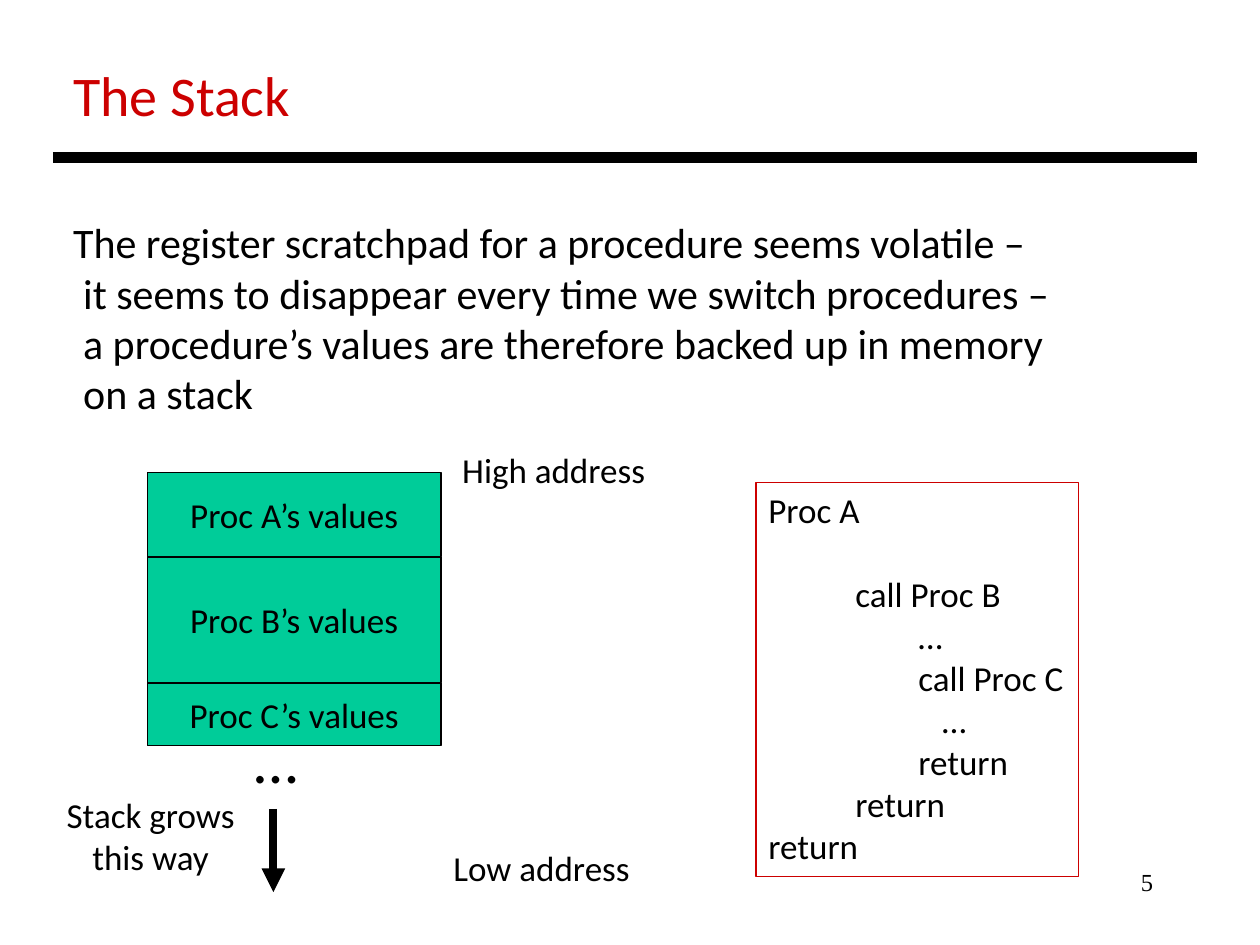
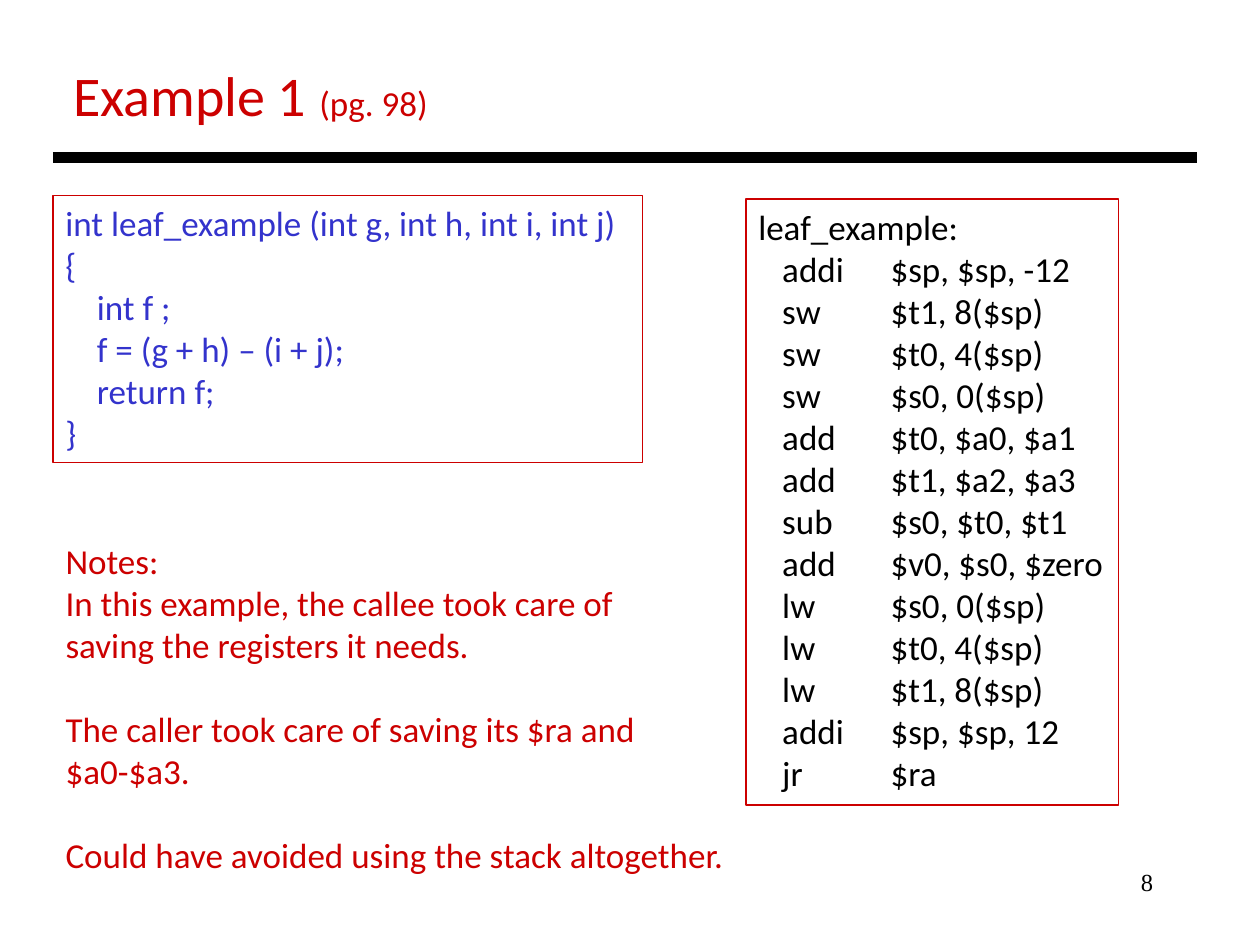
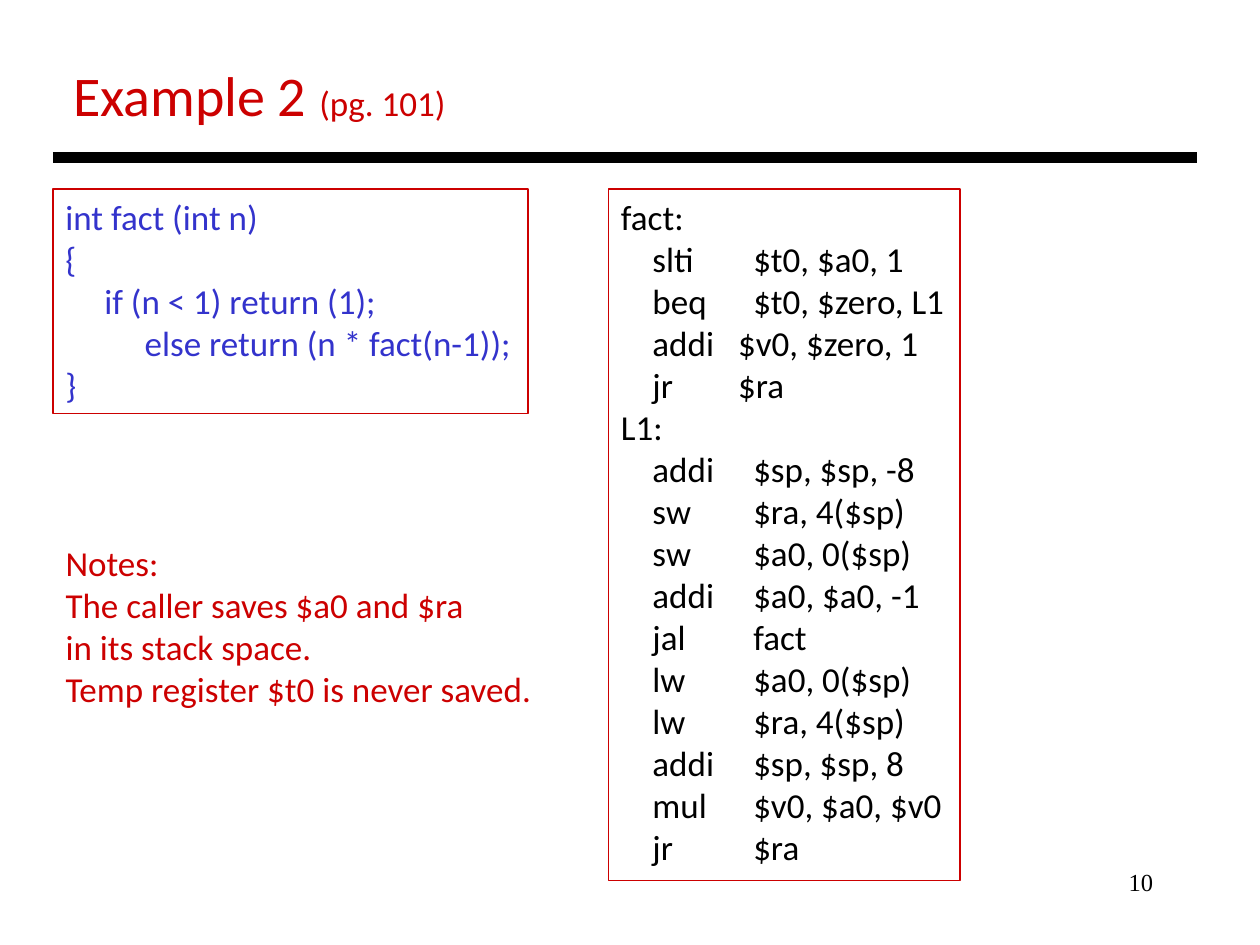
from dataclasses import dataclass

from lxml.etree import SubElement
from pptx import Presentation
from pptx.dml.color import RGBColor
from pptx.enum.shapes import MSO_CONNECTOR as Connector
from pptx.enum.shapes import MSO_SHAPE as Preset
from pptx.enum.text import MSO_ANCHOR as Anchor
from pptx.enum.text import MSO_AUTO_SIZE as AutoSize
from pptx.enum.text import PP_ALIGN as Align
from pptx.oxml.ns import qn
from pptx.shapes.base import BaseShape
from pptx.slide import Slide
from pptx.util import Inches, Pt

COLORS = {"red": "CC0000", "black": "000000", "blue": "3333CC", "green": "00CC99"}
TEXT_FONT = "Calibri"
NUMBER_FONT = "Times New Roman"
BLANK_LINE = Pt(24)
INSET = Inches(0.1)


@dataclass(frozen=True)
class Area:
    left: float
    top: float
    width: float
    height: float

    def lengths(self) -> tuple:
        return tuple(Inches(n) for n in (self.left, self.top, self.width, self.height))


@dataclass(frozen=True)
class Passage:
    """Lines of text in an area.

    Gaps are the indexes of lines set apart. With tabs, a line moves along those
    stops (inches); otherwise its leading tabs choose one of the indents (inches).
    """
    area: Area
    lines: tuple[str, ...]
    color: str = "black"
    size: int = 20
    align: Align = Align.LEFT
    indents: tuple[float, ...] = (0,)
    tabs: tuple[float, ...] = ()
    gaps: tuple[int, ...] = ()


@dataclass(frozen=True)
class Page:
    number: int
    title: str
    reference: str
    prose: Passage
    code: tuple[Passage, ...]


PAGES = (
    Page(5, "The Stack", "", Passage(
        Area(0.33, 1.67, 8.25, 1.72),
        ("The register scratchpad for a procedure seems volatile –",
         "\tit seems to disappear every time we switch procedures –",
         "\ta procedure’s values are therefore backed up in memory",
         "\ton a stack"),
        size=24, indents=(0.15, 0.23)),
        (Passage(
            Area(6, 3.83, 2.56, 3.13),
            ("Proc A", "\tcall Proc B", "\t\t…", "\t\tcall Proc C", "\t\t\t…",
             "\t\treturn", "\treturn", "return"),
            indents=(0, 0.69, 1.19, 1.38), gaps=(1,)),)),
    Page(8, "Example 1 ", "(pg. 98)", Passage(
        Area(0.42, 4.23, 5.47, 2.79),
        ("Notes:", "In this example, the callee took care of",
         "saving the registers it needs.",
         "The caller took care of saving its $ra and", "$a0-$a3.",
         "Could have avoided using the stack altogether."),
        color="red", gaps=(3, 5)),
        (Passage(
            Area(0.42, 1.55, 4.68, 2.12),
            ("int leaf_example (int g, int h, int i, int j)", "{", "\tint f ;",
             "\tf = (g + h) – (i + j);", "\treturn f;", "}"),
            color="blue", indents=(0, 0.25)),
         Passage(
            Area(5.92, 1.58, 2.96, 4.81),
            ("leaf_example:", "\taddi\t$sp, $sp, -12", "\tsw\t$t1, 8($sp)",
             "\tsw\t$t0, 4($sp)", "\tsw\t$s0, 0($sp)", "\tadd\t$t0, $a0, $a1",
             "\tadd\t$t1, $a2, $a3", "\tsub\t$s0, $t0, $t1",
             "\tadd\t$v0, $s0, $zero", "\tlw\t$s0, 0($sp)", "\tlw\t$t0, 4($sp)",
             "\tlw\t$t1, 8($sp)", "\taddi\t$sp, $sp, 12", "\tjr\t$ra"),
            tabs=(0.19, 1.05)))),
    Page(10, "Example 2 ", "(pg. 101)", Passage(
        Area(0.42, 4.25, 3.93, 1.45),
        ("Notes:", "The caller saves $a0 and $ra", "in its stack space.",
         "Temp register $t0 is never saved."),
        color="red"),
        (Passage(
            Area(0.42, 1.5, 3.77, 1.78),
            ("int fact (int n)", "{", "\tif (n < 1) return (1);",
             "\t\telse return (n * fact(n-1));", "}"),
            color="blue", indents=(0, 0.31, 0.63)),
         Passage(
            Area(4.83, 1.5, 2.79, 5.49),
            ("fact:", "\tslti\t\t$t0, $a0, 1", "\tbeq\t\t$t0, $zero, L1",
             "\taddi\t$v0, $zero, 1", "\tjr\t$ra", "L1:",
             "\taddi\t\t$sp, $sp, -8", "\tsw\t\t$ra, 4($sp)",
             "\tsw\t\t$a0, 0($sp)", "\taddi\t\t$a0, $a0, -1", "\tjal\t\tfact",
             "\tlw\t\t$a0, 0($sp)", "\tlw\t\t$ra, 4($sp)",
             "\taddi\t\t$sp, $sp, 8", "\tmul\t\t$v0, $a0, $v0", "\tjr\t\t$ra"),
            tabs=(0.25, 0.93, 1.05)))),
)

STACK_LABELS = (
    Passage(Area(1.92, 5.67, 0.55, 0.71), ("…",), size=36),
    Passage(Area(3.57, 3.51, 1.67, 0.44), ("High address",)),
    Passage(Area(3.5, 6.67, 1.61, 0.44), ("Low address",)),
    Passage(Area(0.42, 6.25, 1.55, 0.77), ("Stack grows", "this way"),
            align=Align.CENTER),
)
STACK_FRAMES = (("A", 0.67), ("B", 1), ("C", 0.5))


def rgb(name: str) -> RGBColor:
    return RGBColor.from_string(COLORS[name])


def add_span(para, text: str, *, size: int, color: str, font: str = TEXT_FONT) -> None:
    span = para.add_run()
    span.text = text
    span.font.name = font
    span.font.size = Pt(size)
    span.font.color.rgb = rgb(color)


def indent_line(para, line: str, passage: Passage) -> str:
    """Set the paragraph's stops or indent and return the text it should hold."""
    properties = para._p.get_or_add_pPr()
    SubElement(properties, qn("a:buNone"))
    if passage.tabs:
        stops = SubElement(properties, qn("a:tabLst"))
        for stop in passage.tabs:
            SubElement(stops, qn("a:tab"), pos=str(Inches(stop)), algn="l")
        return line
    text = line.lstrip("\t")
    properties.set("marL", str(Inches(passage.indents[len(line) - len(text)])))
    properties.set("indent", "0")
    return text


def write_passage(shape: BaseShape, passage: Passage, *, font: str = TEXT_FONT,
                  anchor: Anchor = Anchor.TOP) -> None:
    frame = shape.text_frame
    frame.word_wrap = True
    frame.auto_size = AutoSize.NONE
    frame.vertical_anchor = anchor
    frame.margin_left = INSET if passage.align == Align.LEFT else 0
    frame.margin_right = INSET if passage.align == Align.RIGHT else 0
    for index, line in enumerate(passage.lines):
        para = frame.add_paragraph() if index else frame.paragraphs[0]
        para.alignment = passage.align
        para.space_before = BLANK_LINE if index in passage.gaps else Pt(0)
        text = indent_line(para, line, passage)
        add_span(para, text, size=passage.size, color=passage.color, font=font)


def place(shape: BaseShape, area: Area) -> None:
    shape.left, shape.top, shape.width, shape.height = area.lengths()


def add_label(slide: Slide, passage: Passage, font: str = TEXT_FONT) -> None:
    box = slide.shapes.add_textbox(*passage.area.lengths())
    write_passage(box, passage, font=font)


def add_box(slide: Slide, passage: Passage, *, line: str, fill: str = "",
            anchor: Anchor = Anchor.TOP) -> None:
    box = slide.shapes.add_shape(Preset.RECTANGLE, *passage.area.lengths())
    box.shadow.inherit = False
    if fill:
        box.fill.solid()
        box.fill.fore_color.rgb = rgb(fill)
    else:
        box.fill.background()
    box.line.color.rgb = rgb(line)
    box.line.width = Pt(0.75)
    write_passage(box, passage, anchor=anchor)


def add_line(slide: Slide, start: tuple[float, float], end: tuple[float, float], *,
             width: float, arrow: bool = False) -> None:
    line = slide.shapes.add_connector(
        Connector.STRAIGHT, *(Inches(n) for n in start + end))
    line.line.color.rgb = rgb("black")
    line.line.width = Pt(width)
    if arrow:
        SubElement(line.line._get_or_add_ln(), qn("a:tailEnd"), type="triangle")
    SubElement(line._element.spPr, qn("a:effectLst"))


def add_page(deck, page: Page) -> Slide:
    """Add a slide with its title, rule, number, prose and code boxes."""
    slide = deck.slides.add_slide(deck.slide_layouts[1])
    title, body = slide.placeholders
    heading = Passage(Area(0.48, 0.43, 8, 0.64), (page.title,), "red", 32)
    place(title, heading.area)
    write_passage(title, heading)
    if page.reference:
        add_span(title.text_frame.paragraphs[0], page.reference, size=20, color="red")
    place(body, page.prose.area)
    write_passage(body, page.prose)
    add_line(slide, (0.42, 1.25), (9.5, 1.25), width=6)
    number = Passage(Area(7.17, 6.83, 2.08, 0.5), (str(page.number),),
                     size=14, align=Align.RIGHT)
    add_label(slide, number, NUMBER_FONT)
    for code in page.code:
        add_box(slide, code, line="red")
    return slide


def add_stack(slide: Slide) -> None:
    top = 3.75
    for name, height in STACK_FRAMES:
        values = Passage(Area(1.17, top, 2.33, height), (f"Proc {name}’s values",),
                         align=Align.CENTER)
        add_box(slide, values, line="black", fill="green", anchor=Anchor.MIDDLE)
        top += height
    for label in STACK_LABELS:
        add_label(slide, label)
    add_line(slide, (2.17, 6.42), (2.17, 7.08), width=4.5, arrow=True)


def main() -> None:
    deck = Presentation()
    deck.slide_width, deck.slide_height = Inches(10), Inches(7.5)
    stack_slide, *_ = [add_page(deck, page) for page in PAGES]
    add_stack(stack_slide)
    deck.save("out.pptx")


if __name__ == "__main__":
    main()
